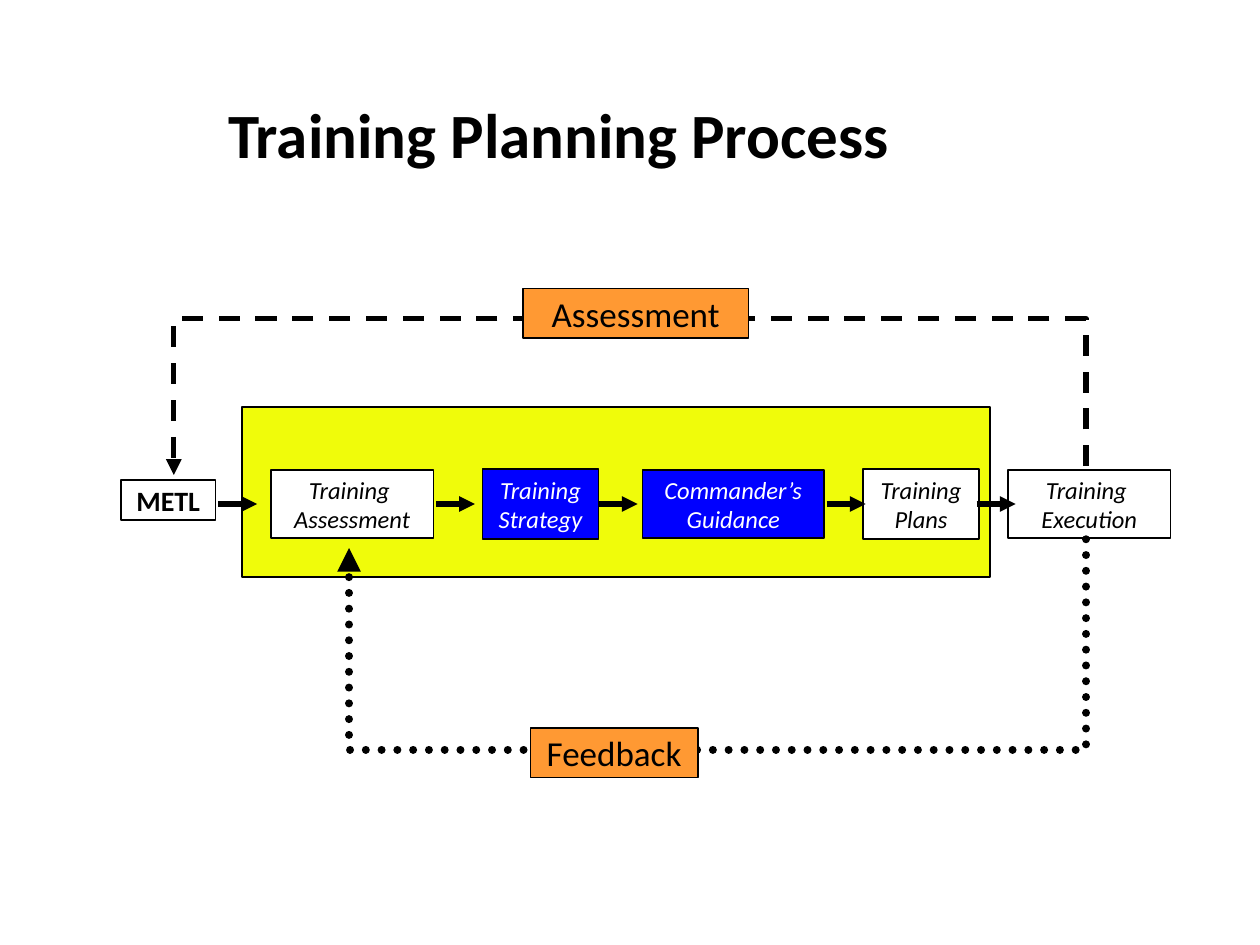
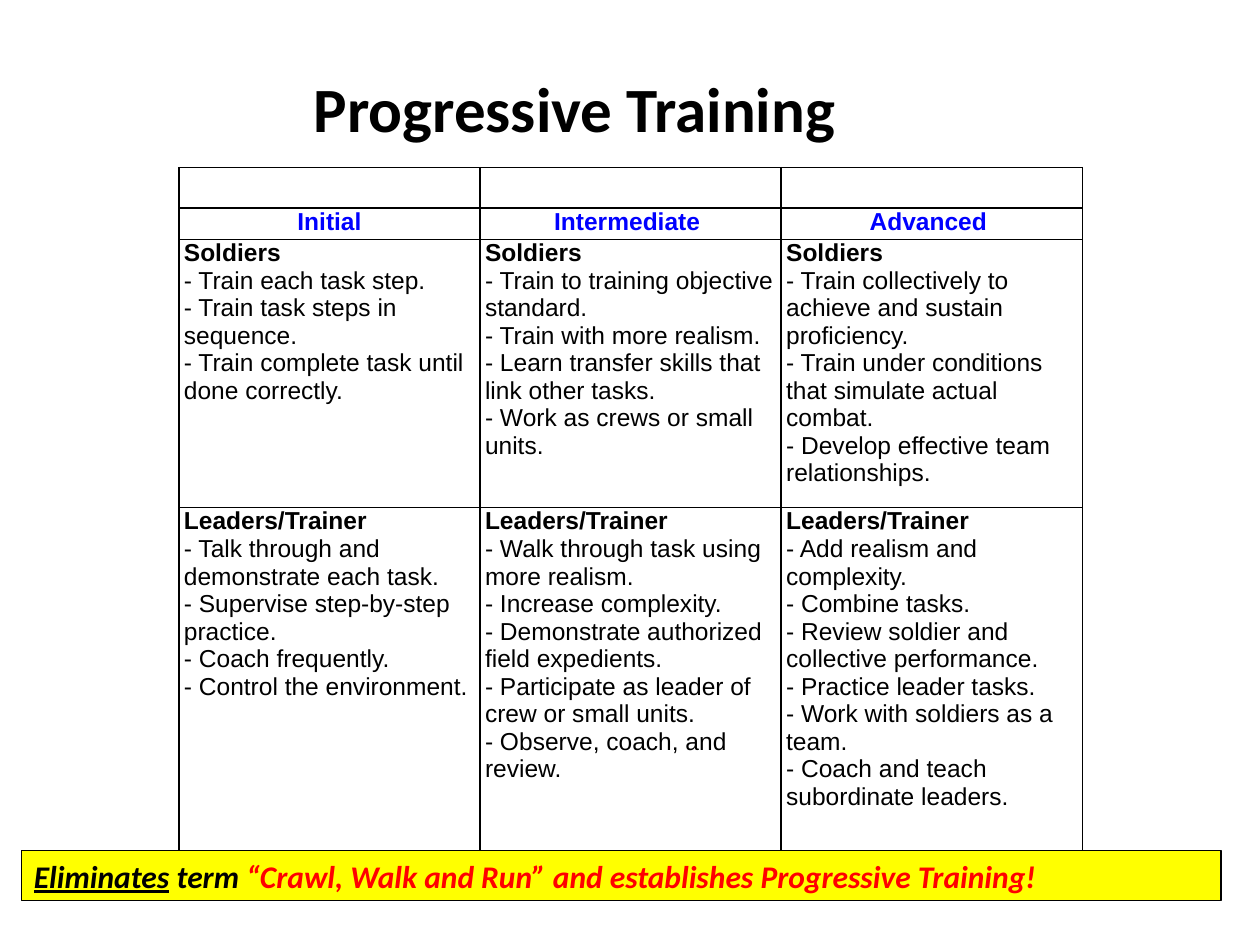
import pptx
import pptx.util
import pptx.dml.color
import pptx.enum.dml
import pptx.enum.shapes
import pptx.enum.text
import pptx.oxml
import pptx.oxml.ns

# Shared look
BLACK, WHITE, BLUE, RED = "000000", "FFFFFF", "0000FF", "FF0000"
ORANGE, LIME, YELLOW = "FF9933", "F0FC0A", "FFFF00"
HEAD_FONT, TABLE_FONT = "Calibri", "Arial"
LEFT = pptx.enum.text.PP_ALIGN.LEFT
CENTER = pptx.enum.text.PP_ALIGN.CENTER
TOP = pptx.enum.text.MSO_ANCHOR.TOP
MIDDLE = pptx.enum.text.MSO_ANCHOR.MIDDLE
DASH = pptx.enum.dml.MSO_LINE

# The slide is a grid of 100 columns by 75 rows
WIDTH, HEIGHT = pptx.util.Inches(10), pptx.util.Inches(7.5)
COLUMNS, ROWS = 100, 75

# Slide 1: label lines, left column, width, height, fill, text colour
FLOW_ROW = 40
STEPS = [
    (["Training ", "Assessment"], 21.5, 12.9, 5.4, WHITE, BLACK),
    (["Training", "Strategy"], 38.3, 9.2, 5.6, BLUE, WHITE),
    (["Commander’s", "Guidance"], 51, 14.4, 5.4, BLUE, WHITE),
    (["Training", "Plans"], 68.5, 9.2, 5.6, WHITE, BLACK),
    (["Training ", "Execution"], 80, 12.9, 5.4, WHITE, BLACK),
]
ARROW_STARTS = [17.3, 34.6, 47.5, 65.6, 77.5]
ARROW_LENGTH = 3.1

# Slide 2: table contents
STAGES = ["Initial", "Intermediate ", "Advanced "]
DUTIES = {
    "Soldiers": [
        ["Train each task step.", "Train task steps in sequence.",
         "Train complete task until done correctly."],
        ["Train to training objective standard.", "Train with more realism.",
         "Learn transfer skills that link other tasks.",
         "Work as crews or small units."],
        ["Train collectively to achieve and sustain proficiency.",
         "Train under conditions that simulate actual combat.",
         "Develop effective team relationships."],
    ],
    "Leaders/Trainer": [
        ["Talk through and demonstrate each task.",
         "Supervise step-by-step practice.", "Coach frequently.",
         "Control the environment."],
        ["Walk through task using more realism.", "Increase complexity.",
         "Demonstrate authorized field expedients.",
         "Participate as leader of crew or small units.",
         "Observe, coach, and review."],
        ["Add realism and complexity.", "Combine tasks.",
         "Review soldier and collective performance.",
         "Practice leader tasks.", "Work with soldiers as a team.",
         "Coach and teach subordinate leaders."],
    ],
}
ROW_HEIGHTS = [3.2, 2.5, 21.3, 29.7]


def across(columns):
    return round(WIDTH * columns / COLUMNS)


def down(rows):
    return round(HEIGHT * rows / ROWS)


def area(left, top, width, height):
    return across(left), down(top), across(width), down(height)


def color(code):
    return pptx.dml.color.RGBColor.from_string(code)


def add_text(para, text, size=14, font=HEAD_FONT, ink=BLACK, align=LEFT,
             bold=False, italic=False, underline=False):
    para.alignment = align
    span = para.add_run()
    span.text = text
    span.font.size = pptx.util.Pt(size)
    span.font.name = font
    span.font.color.rgb = color(ink)
    span.font.bold, span.font.italic = bold, italic
    span.font.underline = underline


def add_lines(frame, lines, **style):
    for index, text in enumerate(lines):
        para = frame.add_paragraph() if index else frame.paragraphs[0]
        add_text(para, text, **style)


def add_title(page, text, place):
    title = page.shapes.title
    title.left, title.top, title.width, title.height = area(*place)
    frame = title.text_frame
    frame.word_wrap = False
    frame.auto_size = pptx.enum.text.MSO_AUTO_SIZE.NONE
    frame.vertical_anchor = TOP
    add_text(frame.paragraphs[0], text, size=36, bold=True)


def add_box(page, place, fill, lines=(), weight=1, anchor=MIDDLE, **style):
    box = page.shapes.add_shape(
        pptx.enum.shapes.MSO_SHAPE.RECTANGLE, *area(*place))
    box.shadow.inherit = False
    box.fill.solid()
    box.fill.fore_color.rgb = color(fill)
    box.line.color.rgb = color(BLACK)
    box.line.width = pptx.util.Pt(weight)
    box.text_frame.word_wrap = False
    box.text_frame.vertical_anchor = anchor
    add_lines(box.text_frame, lines, **style)
    return box


def format_arrow(shape, weight):
    shape.line.color.rgb = color(BLACK)
    shape.line.width = pptx.util.Pt(weight)
    outline = shape.line._get_or_add_ln()
    pptx.oxml.ns.qn("a:tailEnd")
    outline.append(pptx.oxml.parse_xml(
        f'<a:tailEnd {pptx.oxml.ns.nsdecls("a")} type="triangle"/>'))
    return outline


def add_arrow(page, start):
    arrow = page.shapes.add_connector(
        pptx.enum.shapes.MSO_CONNECTOR.STRAIGHT,
        across(start), down(FLOW_ROW),
        across(start + ARROW_LENGTH), down(FLOW_ROW))
    format_arrow(arrow, 3)
    arrow.element.spPr.append(pptx.oxml.parse_xml(
        f'<a:effectLst {pptx.oxml.ns.nsdecls("a")}/>'))
    return arrow


def add_loop(page, points, weight, dash, cap="flat"):
    first, *rest = [(across(x), down(y)) for x, y in points]
    builder = page.shapes.build_freeform(*first)
    builder.add_line_segments(rest, close=False)
    loop = builder.convert_to_shape()
    loop.shadow.inherit = False
    loop.fill.background()
    loop.line.dash_style = dash
    format_arrow(loop, weight).set("cap", cap)


def format_cell(cell):
    cell.fill.solid()
    cell.fill.fore_color.rgb = color(WHITE)
    cell.margin_left = cell.margin_right = across(0.4)
    cell.margin_top = cell.margin_bottom = 0
    properties = cell._tc.get_or_add_tcPr()
    for index, side in enumerate(("lnL", "lnR", "lnT", "lnB")):
        properties.insert(index, pptx.oxml.parse_xml(
            f'<a:{side} {pptx.oxml.ns.nsdecls("a")} w="12700"><a:solidFill>'
            f'<a:srgbClr val="{BLACK}"/></a:solidFill></a:{side}>'))


def add_stage_table(page):
    table = page.shapes.add_table(
        len(ROW_HEIGHTS), len(STAGES),
        *area(14.2, 13.3, 71.7, sum(ROW_HEIGHTS))).table
    table.first_row = table.horz_banding = False
    for row, height in zip(table.rows, ROW_HEIGHTS):
        row.height = down(height)
    for cell in table.iter_cells():
        format_cell(cell)
    for column, stage in enumerate(STAGES):
        add_lines(table.cell(1, column).text_frame, [stage], font=TABLE_FONT,
                  ink=BLUE, bold=True, align=CENTER)
        for row, (role, duties) in enumerate(DUTIES.items(), start=2):
            frame = table.cell(row, column).text_frame
            add_lines(frame, [role], font=TABLE_FONT, bold=True)
            for duty in duties[column]:
                add_text(frame.add_paragraph(), f"- {duty}", font=TABLE_FONT)


def build_process(page):
    add_title(page, "Training Planning Process", (17.1, 7.1, 65.4, 7.1))

    # Main flow
    add_box(page, (19.2, 32.3, 59.4, 13.5), LIME)
    boxes = [
        add_box(page, (left, FLOW_ROW - height / 2, width, height), fill,
                lines, ink=ink, italic=True, align=CENTER)
        for lines, left, width, height, fill, ink in STEPS]
    add_box(page, (9.6, 38.1, 7.5, 3.2), WHITE, ["METL"],
            size=16, bold=True, align=CENTER)
    arrows = [add_arrow(page, start) for start in ARROW_STARTS]
    arrows[2].begin_connect(boxes[1], 3)

    # Return loops and their labels
    add_loop(page, [(86.2, 42.8), (86.2, 59.5), (27.7, 59.5), (27.7, 43.5)],
             4.5, DASH.ROUND_DOT, cap="rnd")
    add_box(page, (42.1, 57.8, 13.3, 3.9), ORANGE, ["Feedback"],
            size=20, align=CENTER)
    add_loop(page, [(86.2, 37), (86.2, 25.3), (13.8, 25.3), (13.8, 37.7)],
             3, DASH.DASH)
    add_box(page, (41.5, 22.9, 17.9, 3.9), ORANGE, ["Assessment"],
            size=20, align=CENTER)


def build_progression(page):
    add_title(page, "Progressive Training", (23.9, 5, 51.9, 7.1))
    add_stage_table(page)

    # Closing banner
    banner = add_box(page, (1.7, 67.5, 95.2, 4), YELLOW,
                     weight=0.75, anchor=TOP)
    para = banner.text_frame.paragraphs[0]
    style = {"size": 18, "bold": True, "italic": True}
    add_text(para, "Eliminates", underline=True, **style)
    add_text(para, " term ", **style)
    add_text(para, "“Crawl, Walk and Run” and establishes "
             "Progressive Training!", ink=RED, **style)


def main():
    deck = pptx.Presentation()
    deck.slide_width, deck.slide_height = WIDTH, HEIGHT
    title_only = deck.slide_layouts[5]
    for build in (build_process, build_progression):
        build(deck.slides.add_slide(title_only))
    deck.save("out.pptx")


if __name__ == "__main__":
    main()
